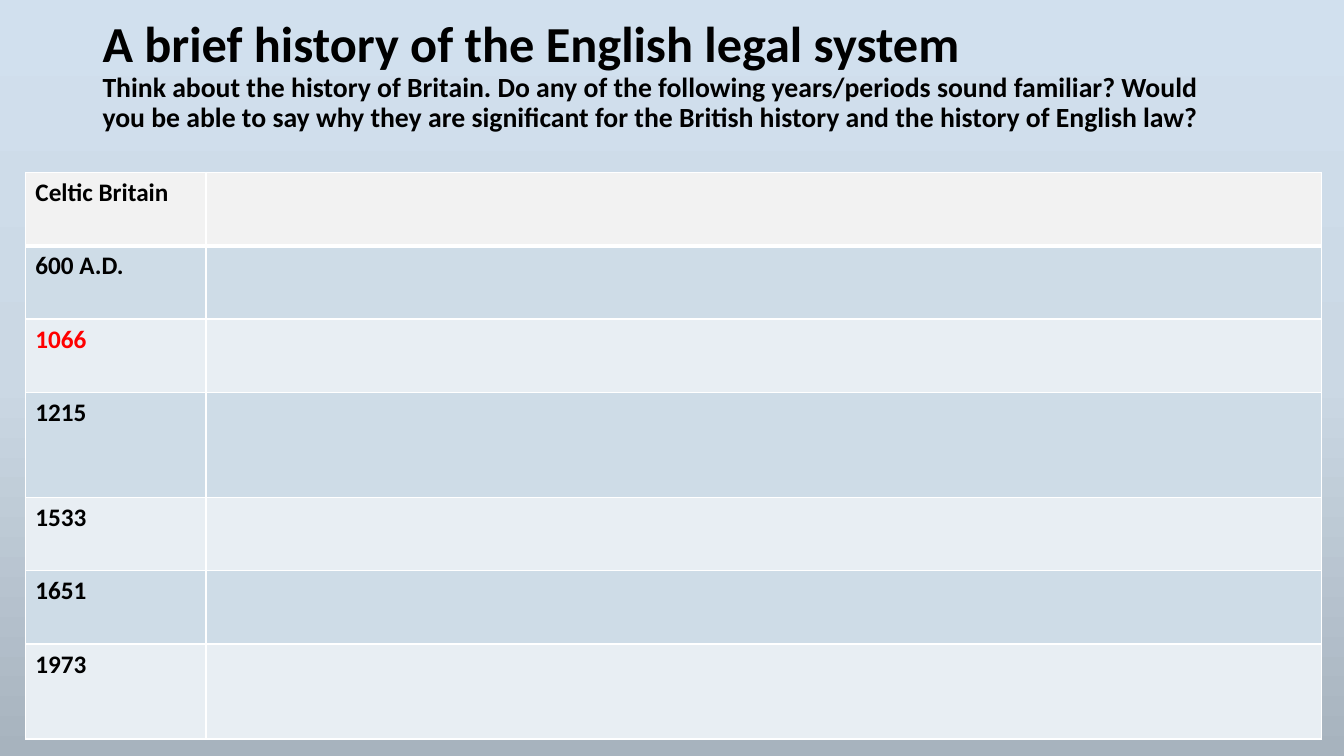
from copy import deepcopy

from lxml import etree
from pptx import Presentation
from pptx.dml.color import RGBColor
from pptx.enum.text import MSO_ANCHOR, MSO_AUTO_SIZE, PP_ALIGN
from pptx.oxml.ns import qn
from pptx.util import Cm, Pt

LEFT = PP_ALIGN.LEFT
MIDDLE = MSO_ANCHOR.MIDDLE
NO_AUTOFIT = MSO_AUTO_SIZE.NONE

COLORS = {
    "text": "000000",
    "highlight": "FF0000",
    "border": "FFFFFF",
    "header": "F2F2F2",
    "odd_row": "CEDCE7",
    "even_row": "E8EEF3",
    "sky_top": "D1E0EE",
    "sky_middle": "CBD8E4",
    "sky_bottom": "A7B3BE",
}
HEADING = "A brief history of the English legal system"
QUESTION = (
    "Think about the history of Britain. Do any of the following years/periods "
    "sound familiar? Would you be able to say why they are significant for the "
    "British history and the history of English law?"
)
PERIODS = [
    ("Celtic Britain", 1.85),
    ("600 A.D.", 1.85),
    ("1066", 1.85),
    ("1215", 2.64),
    ("1533", 1.85),
    ("1651", 1.85),
    ("1973", 2.39),
]
KEY_PERIOD = "1066"


def write(paragraph, text, size=18, color="text", bold=True, font="Calibri"):
    run = paragraph.add_run()
    run.text = text
    run.font.name = font
    run.font.size = Pt(size)
    run.font.bold = bold
    run.font.color.rgb = RGBColor.from_string(COLORS[color])


class HistorySlide:
    def __init__(self, deck):
        self.slide = deck.slides.add_slide(deck.slide_layouts[5])

    def background(self, *shades):
        fill = self.slide.background.fill
        fill.gradient()
        fill.gradient_angle = 270
        first = self.slide.background._cSld.find(".//" + qn("a:gs"))
        first.addnext(deepcopy(first))
        for index, (stop, shade) in enumerate(zip(fill.gradient_stops, shades)):
            stop.position = index / (len(shades) - 1)
            stop.color.rgb = RGBColor.from_string(COLORS[shade])

    def title(self, heading, question):
        title = self.slide.shapes.title
        title.left, title.top = Cm(2.33), Cm(0.28)
        title.width, title.height = Cm(29.21), Cm(3.3)
        frame = title.text_frame
        frame.word_wrap = True
        frame.auto_size = NO_AUTOFIT
        frame.vertical_anchor = MIDDLE
        paragraph = frame.paragraphs[0]
        paragraph.alignment = LEFT
        paragraph.line_spacing = 0.9
        write(paragraph, heading, size=36)
        paragraph.add_line_break()
        write(paragraph, question, size=19.8)

    def borders(self, cell, top=1, bottom=1):
        properties = cell._tc.get_or_add_tcPr()
        for side, width in (("L", 1), ("R", 1), ("T", top), ("B", bottom)):
            line = etree.SubElement(properties, qn(f"a:ln{side}"), w=str(Pt(width)))
            fill = etree.SubElement(line, qn("a:solidFill"))
            etree.SubElement(fill, qn("a:srgbClr"), val=COLORS["border"])

    def timeline(self, periods, widths):
        height = sum(row_height for _, row_height in periods)
        table = self.slide.shapes.add_table(
            len(periods), len(widths), Cm(0.64), Cm(4.34), Cm(sum(widths)), Cm(height)
        ).table
        for column, width in zip(table.columns, widths):
            column.width = Cm(width)
        for index, (period, row_height) in enumerate(periods):
            row = table.rows[index]
            row.height = Cm(row_height)
            shade = "odd_row" if index % 2 else "even_row"
            for cell in row.cells:
                self.borders(cell, 3 if index == 1 else 1, 3 if index == 0 else 1)
                cell.fill.solid()
                cell.fill.fore_color.rgb = RGBColor.from_string(
                    COLORS[shade if index else "header"]
                )
            color = "highlight" if period == KEY_PERIOD else "text"
            write(row.cells[0].text_frame.paragraphs[0], period, color=color)


def main():
    deck = Presentation()
    deck.slide_width, deck.slide_height = Cm(33.87), Cm(19.05)
    history = HistorySlide(deck)
    history.background("sky_top", "sky_middle", "sky_bottom")
    history.title(HEADING, QUESTION)
    history.timeline(PERIODS, (4.55, 28.12))
    deck.save("out.pptx")


if __name__ == "__main__":
    main()
